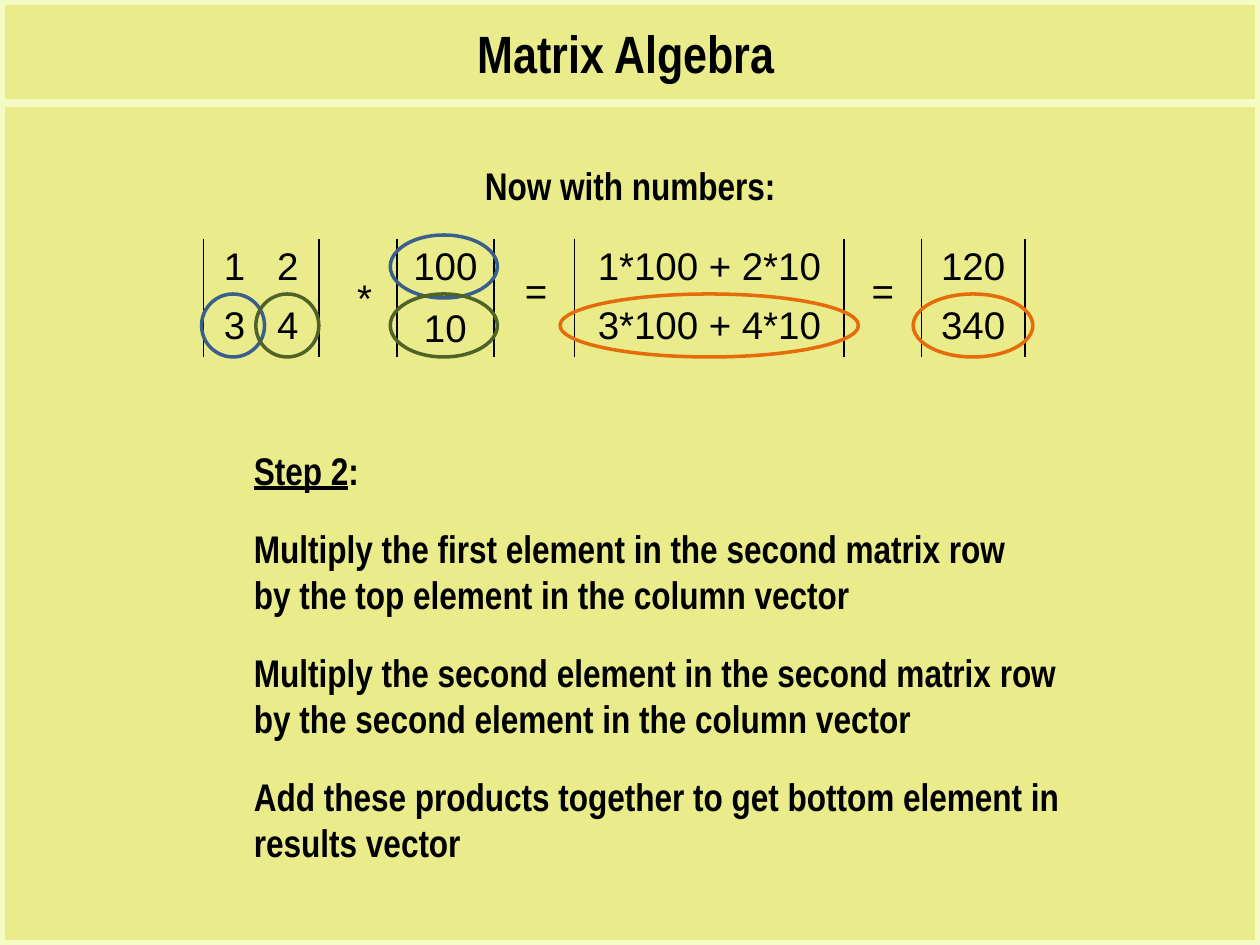
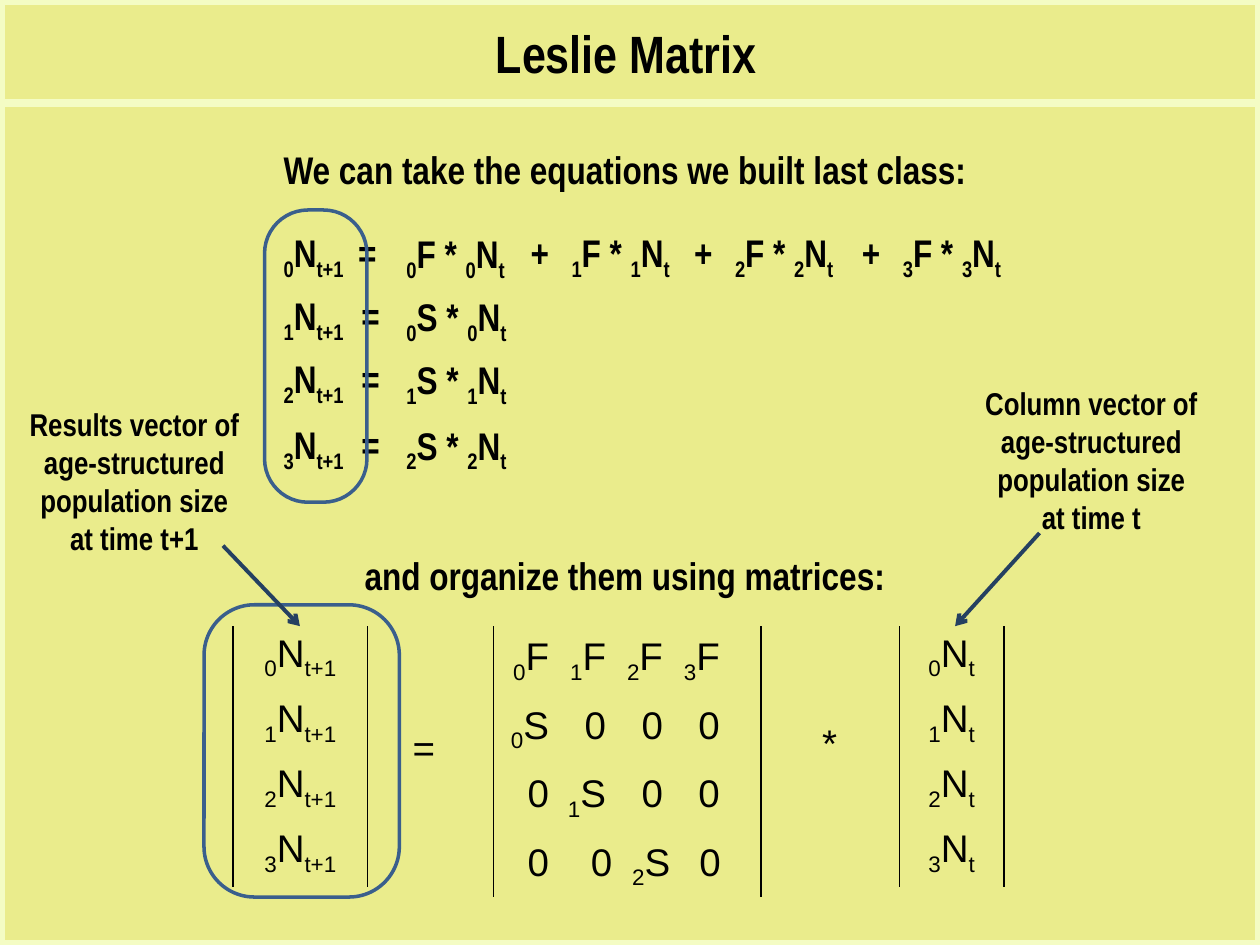
from lxml import etree
from pptx import Presentation
from pptx.dml.color import RGBColor
from pptx.enum.shapes import MSO_CONNECTOR, MSO_SHAPE
from pptx.enum.text import MSO_ANCHOR, PP_ALIGN
from pptx.oxml.ns import qn
from pptx.util import Pt

LEFT, CENTER = PP_ALIGN.LEFT, PP_ALIGN.CENTER
BOTTOM = MSO_ANCHOR.BOTTOM
RECTANGLE, OVAL, ROUNDED = MSO_SHAPE.RECTANGLE, MSO_SHAPE.OVAL, MSO_SHAPE.ROUNDED_RECTANGLE
STRAIGHT = MSO_CONNECTOR.STRAIGHT

COLORS = {"background": "EAEC8C", "frame": "F4FCC4", "text": "000000",
          "blue": "3A5F8C", "green": "4F6228", "orange": "E46C0A", "arrow": "254061"}
BODY_FONT, MATRIX_FONT = "Arial Narrow", "Arial"
WIDTH, HEIGHT = 720, 540
BODY_SIZE = 22
NO_TABLE_STYLE = "{2D5ABB26-0587-4C30-8999-92F81FD0307C}"

# Content: text in square brackets is subscript
STEPS = [  # text, space before
    ("Multiply the first element in the second matrix row", 18),
    ("by the top element in the column vector", 0),
    ("Multiply the second element in the second matrix row "
     "by the second element in the column vector", 18),
    ("Add these products together to get bottom element in results vector", 18),
]
NUMBER_MATRICES = [  # left, width, rows
    (226.8, 55.4, ["100", "10"]),
    (328.4, 154, ["1*100 + 2*10", "3*100 + 4*10"]),
    (526.6, 59, ["120", "340"]),
]
SQUARE_ROWS, SQUARE_STOPS = ["\t1\t2", "\t3\t4"], [16.8, 47.2]
NUMBER_OPERATORS = [("*", 194.4, 154.8), ("=", 292.3, 151.2), ("=", 490.5, 151.2)]
NUMBER_TOP, NUMBER_HEIGHTS = 136.8, [33.5] * 2
TOP_RING, BOTTOM_RING = 134.3, 168
RINGS = [  # left, top, width, colour
    (115.2, BOTTOM_RING, 36, "blue"), (223, TOP_RING, 61.2, "blue"),
    (146.2, BOTTOM_RING, 36, "green"), (223, BOTTOM_RING, 61.2, "green"),
    (320, BOTTOM_RING, 170.6, "orange"), (521.8, BOTTOM_RING, 68.4, "orange"),
]

EQUATIONS = [  # top, tab before the equals sign, right-hand side
    (127.6, 42.5, "[0]F * [0]N[t]"), (163.6, 44.4, "[0]S * [0]N[t]"),
    (199.6, 44.4, "[1]S * [1]N[t]"), (237.1, 44.4, "[2]S * [2]N[t]"),
]
ADDED_TERM_LEFTS = [296.1, 389.5, 485.4]
EVEN_STOPS = [24.4, 57, 89.5, 122]
LESLIE_ROWS = [  # text, right-aligned tab stops
    ("\t[0]F\t[1]F\t[2]F\t[3]F", EVEN_STOPS),
    ("\t[0]S\t0\t0\t0", EVEN_STOPS),
    ("\t0\t[1]S\t0\t0", EVEN_STOPS),
    ("\t0\t0\t[2]S\t0", [24.4, 60.6, 93.7, 122.6]),
]
LESLIE_TOP, LESLIE_HEIGHTS = 357.8, [37.1, 39.2, 39.2, 39.2]
VECTORS = [("t+1", 133.1, 77), ("t", 513.9, 59.8)]  # time, left, width
LESLIE_OPERATORS = [("=", 228.2, 412), ("*", 460, 409.5)]
OUTLINES = [((151.2, 120, 58.5, 167), 0.424), ((116.6, 345.6, 111.6, 167), 0.258)]
CALLOUTS = [  # text box, paragraphs, arrow start and end
    ((7.8, 228, 138, 94.3),
     ["Results vector of age-structured population size at time t+1"],
     (127.4, 311.8, 171.4, 357.8)),
    ((545.9, 216, 155.5, 94.3),
     ["Column vector of age-structured population size", "at time t"],
     (594, 304.6, 545.8, 357.8)),
]


def rgb(name):
    return RGBColor.from_string(COLORS[name])


def points(*values):
    return [Pt(value) for value in values]


# Text
def write_runs(paragraph, text, size=BODY_SIZE, face=BODY_FONT, bold=True):
    for index, part in enumerate(text.replace("]", "[").split("[")):
        if not part:
            continue
        run = paragraph.add_run()
        run.text = part
        run.font.size, run.font.name, run.font.bold = Pt(size), face, bold
        run.font.color.rgb = rgb("text")
        if index % 2:
            run.font._element.set("baseline", "-25000")


def add_tab_stops(paragraph, positions, side):
    stops = etree.SubElement(paragraph._p.get_or_add_pPr(), qn("a:tabLst"))
    for position in positions:
        etree.SubElement(stops, qn("a:tab"), pos=str(Pt(position)), algn=side)


def add_text(slide, box, lines, size=BODY_SIZE, align=LEFT, tab=None):
    frame = slide.shapes.add_textbox(*points(*box)).text_frame
    frame.word_wrap = True
    for index, line in enumerate(lines):
        paragraph = frame.paragraphs[0] if index == 0 else frame.add_paragraph()
        paragraph.alignment = align
        if tab:
            add_tab_stops(paragraph, [tab], "l")
        write_runs(paragraph, line, size)
    return frame


# Shapes and lines
def add_outline(slide, kind, box, color, weight=2):
    shape = slide.shapes.add_shape(kind, *points(*box))
    shape.shadow.inherit = False
    shape.fill.background()
    shape.line.color.rgb, shape.line.width = rgb(color), Pt(weight)
    return shape


def add_line(slide, ends, color, weight, arrow=False):
    line = slide.shapes.add_connector(STRAIGHT, *points(*ends))
    line.line.color.rgb, line.line.width = rgb(color), Pt(weight)
    if arrow:
        etree.SubElement(line.line._get_or_add_ln(), qn("a:tailEnd"), type="arrow")
    etree.SubElement(line._element.spPr, qn("a:effectLst"))


# Matrices: one column, with tab stops between the elements of a row
def add_bar(cell, side):
    properties = cell._tc.get_or_add_tcPr()
    bar = etree.Element(qn(f"a:ln{side}"), w=str(Pt(1)))
    fill = etree.SubElement(bar, qn("a:solidFill"))
    etree.SubElement(fill, qn("a:srgbClr"), val=COLORS["text"])
    properties.insert(0, bar)


def add_matrix(slide, left, top, width, heights, rows, stops=None, bars=True):
    box = points(left, top, width, sum(heights))
    table = slide.shapes.add_table(len(rows), 1, *box).table
    table._tbl.tblPr.find(qn("a:tableStyleId")).text = NO_TABLE_STYLE
    table.first_row = table.horz_banding = False
    for index, (height, text) in enumerate(zip(heights, rows)):
        table.rows[index].height = Pt(height)
        cell = table.cell(index, 0)
        cell.fill.background()
        paragraph = cell.text_frame.paragraphs[0]
        paragraph.alignment = LEFT if stops else CENTER
        if stops:
            add_tab_stops(paragraph, stops[index], "r")
        write_runs(paragraph, text, face=MATRIX_FONT, bold=False)
        if bars:
            add_bar(cell, "R")
            add_bar(cell, "L")
    return table


def add_operators(slide, operators):
    for sign, left, top in operators:
        add_matrix(slide, left, top, 28, [36], [sign], bars=False)


# Shared frame and title
def add_slide(presentation, title):
    slide = presentation.slides.add_slide(presentation.slide_layouts[6])
    slide.background.fill.solid()
    slide.background.fill.fore_color.rgb = rgb("background")
    add_line(slide, (0, 58.8, WIDTH, 58.8), "frame", 5)
    add_outline(slide, RECTANGLE, (0, 0, WIDTH, HEIGHT), "frame", 6)
    add_text(slide, (53, 8.6, 609.8, 43.9), [title], 30, CENTER)
    return slide


def build_number_slide(presentation):
    slide = add_slide(presentation, "Matrix Algebra")
    add_text(slide, (228, 88.8, 264.2, 33.8), ["Now with numbers:"], align=CENTER)

    # Step description
    frame = add_text(slide, (138, 252, 486, 257), ["Step 2"])
    heading = frame.paragraphs[0]
    heading.runs[0].font.underline = True
    write_runs(heading, ":")
    for text, gap in STEPS:
        paragraph = frame.add_paragraph()
        paragraph.space_before = Pt(gap)
        write_runs(paragraph, text)

    # Worked product
    add_matrix(slide, 116.2, NUMBER_TOP, 66.2, NUMBER_HEIGHTS, SQUARE_ROWS,
               [SQUARE_STOPS] * 2)
    tables = [add_matrix(slide, left, NUMBER_TOP, width, NUMBER_HEIGHTS, rows)
              for left, width, rows in NUMBER_MATRICES]
    tables[0].cell(1, 0).vertical_anchor = BOTTOM
    add_operators(slide, NUMBER_OPERATORS)
    for left, top, width, color in RINGS:
        add_outline(slide, OVAL, (left, top, width, 36), color)


def build_leslie_slide(presentation):
    slide = add_slide(presentation, "Leslie Matrix")
    for top, text in [(79.9, "We can take the equations we built last class:"),
                      (311.8, "and organize them using matrices:")]:
        add_text(slide, (30.1, top, 653.8, 33.8), [text], align=CENTER)

    # Equations
    for age, (top, tab, product) in enumerate(EQUATIONS):
        add_text(slide, (155, top, 97.2, 33.8), [f"[{age}]N[t+1]\t="], tab=tab)
        add_text(slide, (225.2, top + 0.4, 84.2, 33.8), [product])
    for age, left in enumerate(ADDED_TERM_LEFTS, 1):
        add_text(slide, (left, EQUATIONS[0][0], 108.7, 33.8),
                 [f"+\t[{age}]F * [{age}]N[t]"], tab=23.4)

    # Matrix form
    for time, left, width in VECTORS:
        rows = [f"[{age}]N[{time}]" for age in range(4)]
        add_matrix(slide, left, LESLIE_TOP, width, [37.1] * 4, rows)
    rows, stops = zip(*LESLIE_ROWS)
    leslie = add_matrix(slide, 282.1, LESLIE_TOP, 152.7, LESLIE_HEIGHTS, rows, stops)
    for cell in leslie.iter_cells():
        cell.vertical_anchor = BOTTOM
    add_operators(slide, LESLIE_OPERATORS)

    # Outlines and callouts
    for box, rounding in OUTLINES:
        add_outline(slide, ROUNDED, box, "blue").adjustments[0] = rounding
    for box, lines, arrow in CALLOUTS:
        add_text(slide, box, lines, 18, CENTER)
        add_line(slide, arrow, "arrow", 2.25, arrow=True)


def main():
    presentation = Presentation()
    presentation.slide_width, presentation.slide_height = points(WIDTH, HEIGHT)
    build_number_slide(presentation)
    build_leslie_slide(presentation)
    presentation.save("out.pptx")


if __name__ == "__main__":
    main()
